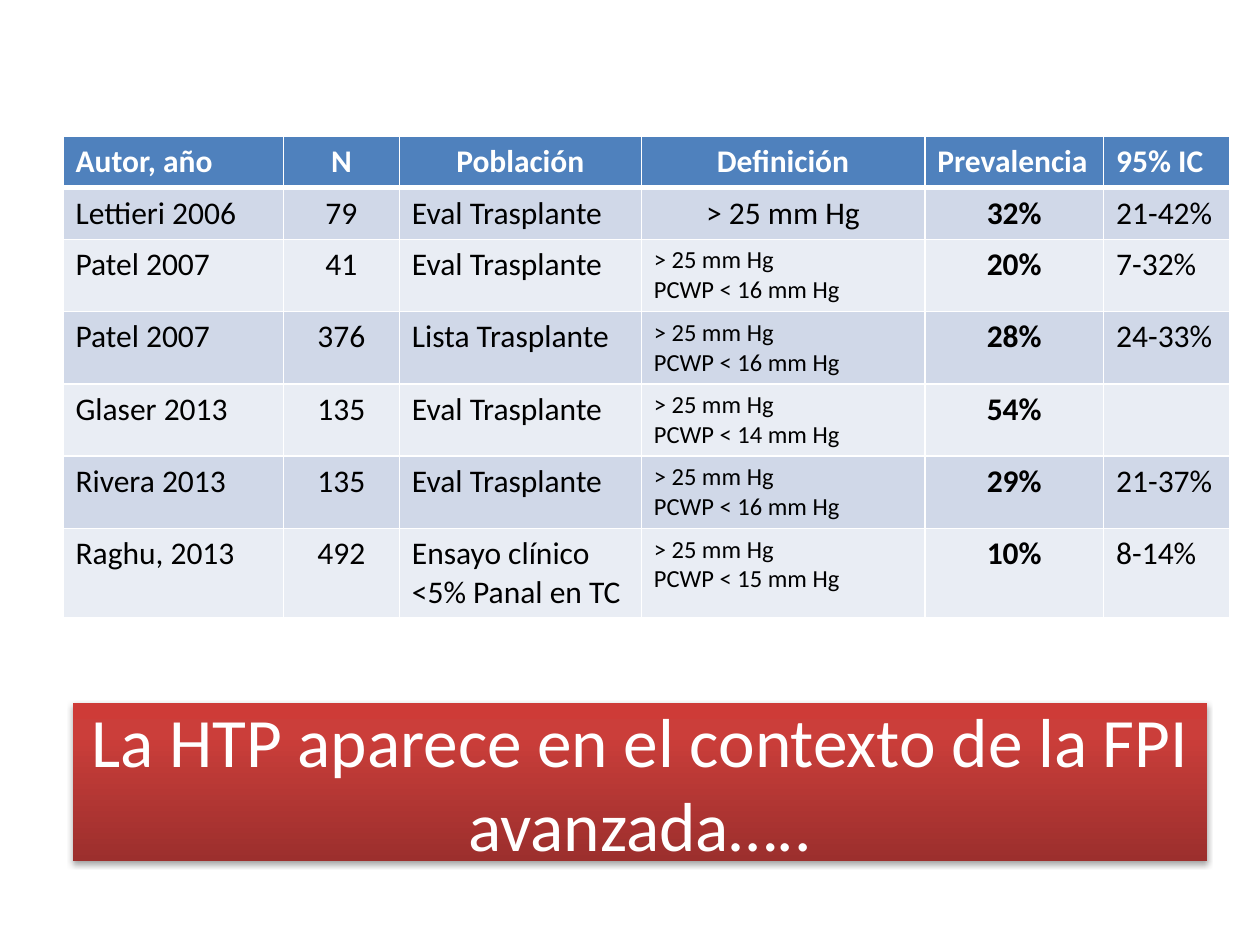
"""Build a slide with a prevalence table and a red title banner."""
from lxml.etree import SubElement as Sub
from pptx import Presentation
from pptx.dml.color import RGBColor
from pptx.enum.text import MSO_ANCHOR, MSO_AUTO_SIZE, PP_ALIGN
from pptx.oxml import parse_xml
from pptx.oxml.ns import qn, nsdecls
from pptx.util import Inches, Pt

WHITE = RGBColor(0xFF, 0xFF, 0xFF)
BLACK = RGBColor(0x00, 0x00, 0x00)
BLUE = RGBColor(0x4F, 0x81, 0xBD)
BANDS = [RGBColor(0xE9, 0xED, 0xF4), RGBColor(0xD0, 0xD8, 0xE8)]
REDS = [
    (0, RGBColor(0x9C, 0x2F, 0x2D)),
    (80, RGBColor(0xCB, 0x3E, 0x3A)),
    (100, RGBColor(0xCE, 0x3B, 0x37)),
]
LEFT, MID = PP_ALIGN.LEFT, PP_ALIGN.CENTER


def write(frame, text, size=18, color=BLACK, bold=False, align=LEFT):
    for i, line in enumerate(text.split("\n")):
        para = frame.add_paragraph() if i else frame.paragraphs[0]
        para.alignment = align
        run = para.add_run()
        run.text = line
        font = run.font
        font.name, font.size, font.bold = "Calibri", Pt(size), bold
        font.color.rgb = color


def edge(cell, side, width):
    line = Sub(cell._tc.get_or_add_tcPr(), qn(f"a:ln{side}"), w=str(Pt(width)))
    Sub(Sub(line, qn("a:solidFill")), qn("a:srgbClr"), val=str(WHITE))


prs = Presentation()
prs.slide_width, prs.slide_height = Inches(10), Inches(7.5)
slide = prs.slides.add_slide(prs.slide_layouts[5])

title = slide.shapes.title
title.left, title.top = Inches(0.58), Inches(5.58)
title.width, title.height = Inches(9), Inches(1.25)
frame = title.text_frame
frame.word_wrap = True
frame.auto_size = MSO_AUTO_SIZE.NONE
frame.vertical_anchor = MSO_ANCHOR.MIDDLE
write(frame, "La HTP aparece en el contexto de la FPI avanzada…..",
      size=39.6, color=WHITE, align=MID)

stops = "".join(
    f'<a:gs pos="{pos * 1000}"><a:srgbClr val="{red}"/></a:gs>' for pos, red in REDS
)
props = title._element.spPr
props.append(parse_xml(
    f'<a:gradFill {nsdecls("a")} rotWithShape="1"><a:gsLst>{stops}</a:gsLst>'
    '<a:lin ang="16200000" scaled="0"/></a:gradFill>'
))
props.append(parse_xml(
    f'<a:effectLst {nsdecls("a")}><a:outerShdw blurRad="{Pt(3.1)}" dist="{Pt(1.8)}" '
    f'dir="5400000" rotWithShape="0"><a:srgbClr val="{BLACK}">'
    '<a:alpha val="35000"/></a:srgbClr></a:outerShdw></a:effectLst>'
))

LIMIT = "> 25 mm Hg"
WEDGE = LIMIT + "\nPCWP < {} mm Hg"
EVAL = "Eval Trasplante"
rows = [
    ("Autor, año", "N", "Población", "Definición", "Prevalencia", "95% IC"),
    ("Lettieri 2006", "79", EVAL, LIMIT, "32%", "21-42%"),
    ("Patel 2007", "41", EVAL, WEDGE.format(16), "20%", "7-32%"),
    ("Patel 2007", "376", "Lista Trasplante", WEDGE.format(16), "28%", "24-33%"),
    ("Glaser 2013", "135", EVAL, WEDGE.format(14), "54%", ""),
    ("Rivera 2013", "135", EVAL, WEDGE.format(16), "29%", "21-37%"),
    ("Raghu, 2013", "492", "Ensayo clínico\n<5% Panal en TC",
     WEDGE.format(15), "10%", "8-14%"),
]
widths = [1.75, 0.92, 1.92, 2.25, 1.42, 1]
heights = [0.41, 0.41, 0.57, 0.57, 0.57, 0.57, 0.7]
head_align = [LEFT, MID, MID, MID, LEFT, LEFT]
body_align = [LEFT, MID, LEFT, LEFT, MID, LEFT]

table = slide.shapes.add_table(
    len(rows), len(widths), Inches(0.5), Inches(1.08), Inches(9.25), Inches(3.8)
).table
for col, width in zip(table.columns, widths):
    col.width = Inches(width)
for row, height in zip(table.rows, heights):
    row.height = Inches(height)

for r, row in enumerate(rows):
    head = r == 0
    for c, text in enumerate(row):
        cell = table.cell(r, c)
        for side in "LRTB":
            thick = (head and side == "B") or (r == 1 and side == "T")
            edge(cell, side, 3 if thick else 1)
        cell.fill.solid()
        cell.fill.fore_color.rgb = BLUE if head else BANDS[r % 2]
        if not text:
            continue
        align = head_align[c] if head else body_align[c]
        if text == LIMIT:
            align = MID
        write(cell.text_frame, text, size=14 if "PCWP" in text else 18,
              color=WHITE if head else BLACK, bold=head or c == 4, align=align)

prs.save("out.pptx")
